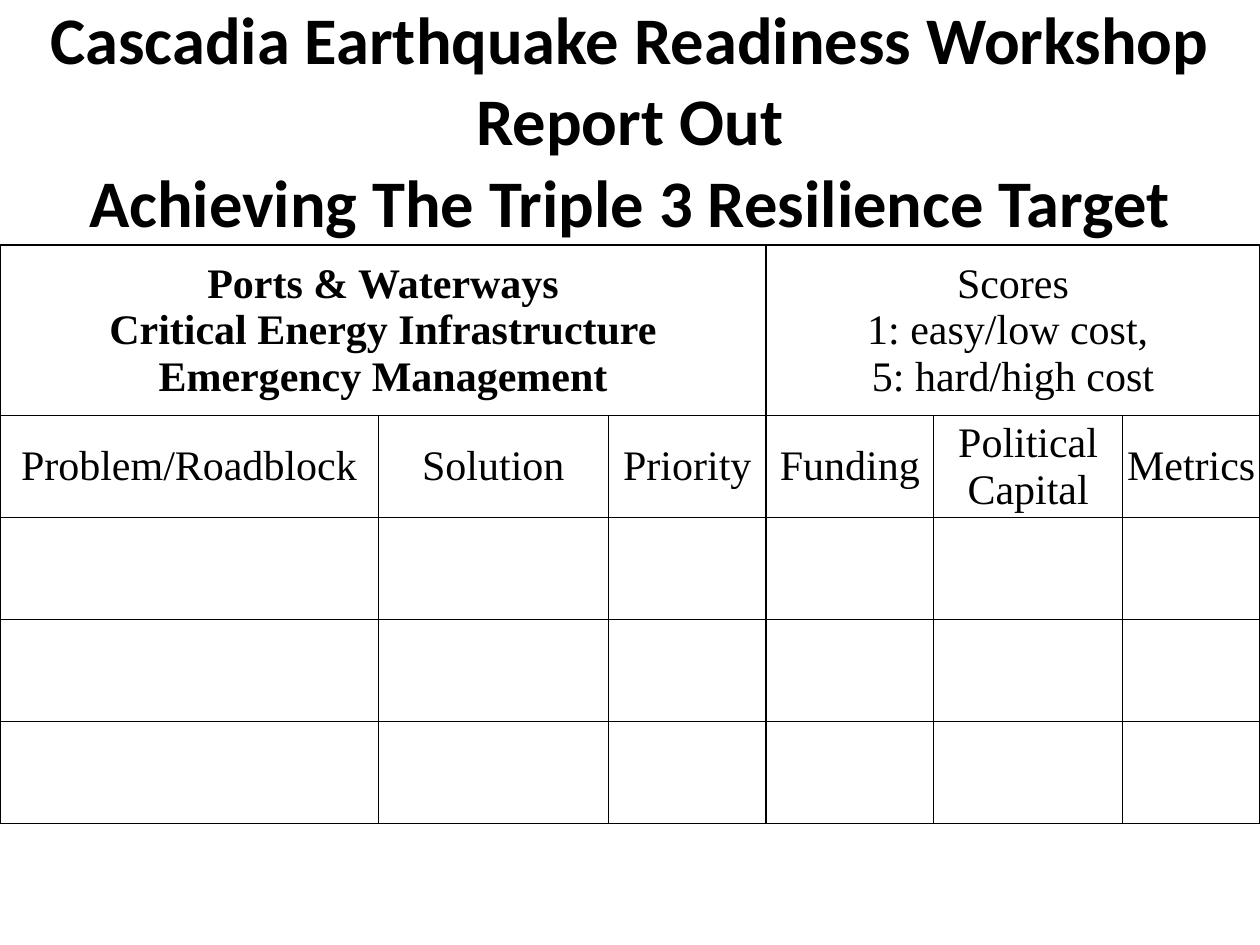
from dataclasses import dataclass

from lxml.etree import SubElement
from pptx import Presentation
from pptx.dml.color import RGBColor
from pptx.enum.text import MSO_ANCHOR as Anchor, PP_ALIGN as Align
from pptx.oxml.ns import qn
from pptx.table import Table, _Cell as Cell
from pptx.util import Inches, Pt


@dataclass(frozen=True)
class Theme:
    ink: str = "000000"
    title_face: str = "Calibri"
    body_face: str = "Times New Roman"
    title_size: int = 38
    body_size: int = 24
    heavy_line: float = 1
    fine_line: float = 0.5


@dataclass(frozen=True)
class Entry:
    row: int
    column: int
    text: str
    span: int = 1
    bold: bool = False
    face: str = Theme.body_face
    size: int = Theme.body_size


THEME = Theme()
SLIDE_WIDTH, SLIDE_HEIGHT = Inches(10), Inches(7.5)
COLUMN_SHARES = (0.3, 0.183, 0.125, 0.133, 0.15, 0.109)
ROW_SHARES = (0.145, 0.18) + (0.108,) * 4
TABLE_SHARE = 0.868
GROUP_SPAN = 3
SIDES = ("L", "R", "T", "B")

CELL_FORMAT = {
    "margin_left": Inches(0.01),
    "margin_right": Inches(0.01),
    "margin_top": Inches(0.01),
    "margin_bottom": 0,
    "vertical_anchor": Anchor.MIDDLE,
}

HEADINGS = ("Problem/Roadblock", "Solution", "Priority", "Funding", "Political Capital", "Metrics")
ENTRIES = [
    Entry(
        0, 0,
        "Cascadia Earthquake Readiness Workshop Report Out\nAchieving The Triple 3 Resilience Target",
        span=len(COLUMN_SHARES), bold=True, face=THEME.title_face, size=THEME.title_size,
    ),
    Entry(
        1, 0,
        "Ports & Waterways\nCritical Energy Infrastructure\nEmergency Management",
        span=GROUP_SPAN, bold=True,
    ),
    Entry(1, GROUP_SPAN, "Scores\n1: easy/low cost, \n5: hard/high cost", span=GROUP_SPAN),
    *(Entry(2, column, heading) for column, heading in enumerate(HEADINGS)),
]


def apply(target: object, values: dict) -> None:
    for name, value in values.items():
        setattr(target, name, value)


def border_widths(row: int, column: int) -> dict[str, float]:
    heavy, fine = THEME.heavy_line, THEME.fine_line
    if row == 0:
        return {"B": heavy}
    if row == 1:
        return {"L": heavy, "R": heavy, "T": heavy, "B": fine}
    place = column % GROUP_SPAN
    return {
        "L": heavy if place == 0 else fine,
        "R": heavy if place == GROUP_SPAN - 1 else fine,
        "T": fine,
        "B": fine,
    }


def draw_borders(cell: Cell, widths: dict[str, float]) -> None:
    properties = cell._tc.get_or_add_tcPr()
    for position, side in enumerate(SIDES):
        line = SubElement(properties, qn(f"a:ln{side}"))
        properties.insert(position, line)
        if side in widths:
            line.set("w", str(int(Pt(widths[side]))))
            ink = SubElement(SubElement(line, qn("a:solidFill")), qn("a:srgbClr"))
            ink.set("val", THEME.ink)
        else:
            line.set("w", "0")
            SubElement(line, qn("a:noFill"))


def write_entry(table: Table, entry: Entry) -> None:
    cell = table.cell(entry.row, entry.column)
    if entry.span > 1:
        cell.merge(table.cell(entry.row, entry.column + entry.span - 1))
    paragraph = cell.text_frame.paragraphs[0]
    paragraph.alignment = Align.CENTER
    for index, wording in enumerate(entry.text.split("\n")):
        if index:
            paragraph.add_line_break()
        run = paragraph.add_run()
        run.text = wording
        apply(run.font, {"name": entry.face, "size": Pt(entry.size), "bold": entry.bold})
        run.font.color.rgb = RGBColor.from_string(THEME.ink)


def build_worksheet(table: Table) -> None:
    apply(table, {"first_row": False, "horz_banding": False})
    for column, share in zip(table.columns, COLUMN_SHARES):
        column.width = int(SLIDE_WIDTH * share)
    for row, share in zip(table.rows, ROW_SHARES):
        row.height = int(SLIDE_HEIGHT * share)
    for row in range(len(ROW_SHARES)):
        for column in range(len(COLUMN_SHARES)):
            cell = table.cell(row, column)
            apply(cell, CELL_FORMAT)
            cell.fill.background()
            draw_borders(cell, border_widths(row, column))
    for entry in ENTRIES:
        write_entry(table, entry)


def main() -> None:
    deck = Presentation()
    apply(deck, {"slide_width": SLIDE_WIDTH, "slide_height": SLIDE_HEIGHT})
    slide = deck.slides.add_slide(deck.slide_layouts[6])
    table_height = int(SLIDE_HEIGHT * TABLE_SHARE)
    worksheet = slide.shapes.add_table(
        len(ROW_SHARES), len(COLUMN_SHARES), 0, 0, SLIDE_WIDTH, table_height
    )
    build_worksheet(worksheet.table)
    worksheet.height = table_height
    deck.save("out.pptx")


if __name__ == "__main__":
    main()
